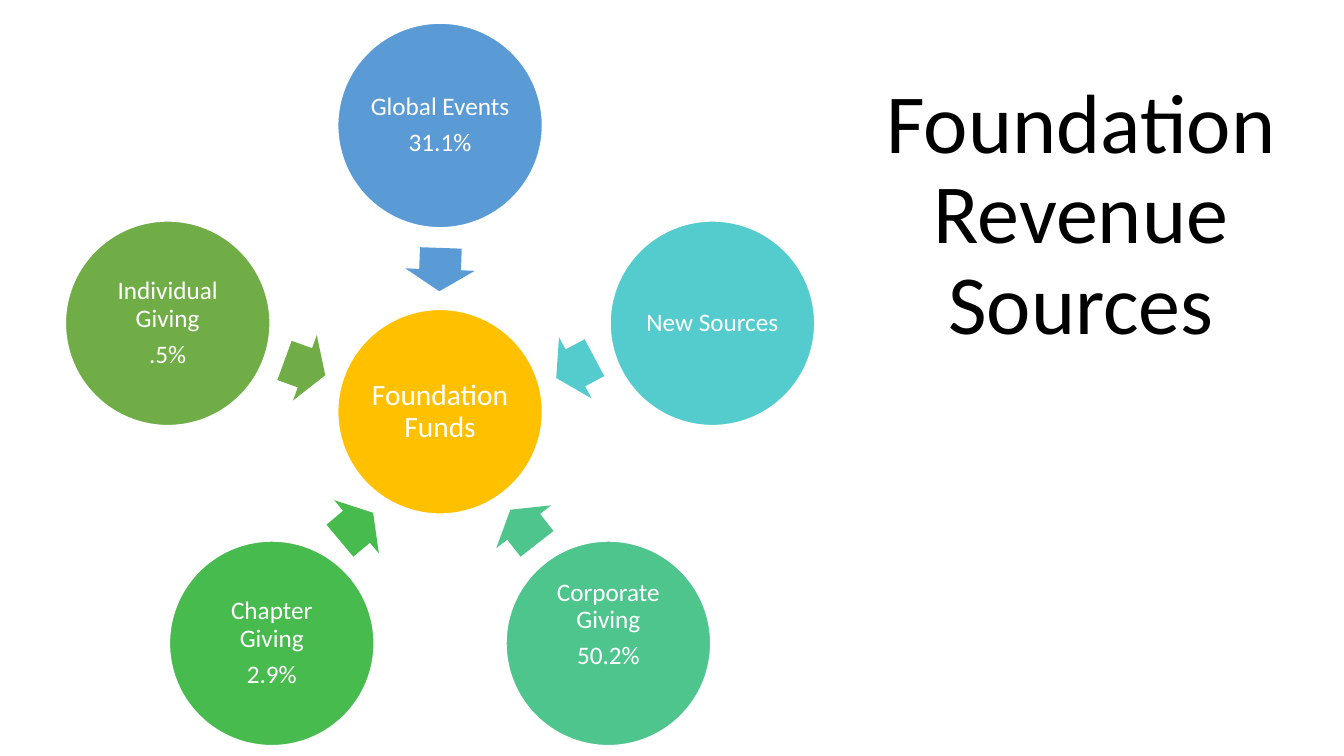
import math

import pptx
import pptx.dml.color
import pptx.enum.shapes
import pptx.enum.text
import pptx.util

Inches, Pt = pptx.util.Inches, pptx.util.Pt
MSO_SHAPE = pptx.enum.shapes.MSO_SHAPE
ANCHOR = pptx.enum.text.MSO_ANCHOR
CENTER = pptx.enum.text.PP_ALIGN.CENTER

HUB_X, HUB_Y = 4.365, 4.085
DIAMETER = 2.03
SOURCE_RADIUS, ARROW_RADIUS = 2.84, 1.41
ARROW_W, ARROW_H = 0.43, 0.69
SOURCES = [
    (["Global Events", "31.1%"], "5B9BD5", 92, 0.03),
    (["New Sources"], "54CCCD", 152, 0.03),
    (["Corporate Giving", "50.2%"], "4DC58D", 232, 0.39),
    (["Chapter Giving", "2.9%"], "48BB4F", 320, 0.03),
    (["Individual Giving", ".5%"], "70AD47", 20, 0.03),
]


def rgb(value):
    return pptx.dml.color.RGBColor.from_string(value)


class RadialSlide:
    """Hold the text style and the slide that elements are added to."""

    font = "Calibri"

    def __init__(self, prs):
        self.s = prs.slides.add_slide(prs.slide_layouts[0])
        subtitle = self.s.placeholders[1].element
        subtitle.getparent().remove(subtitle)

    def set_text(self, sp, lines, size, color, frame):
        tf = sp.text_frame
        tf.text = "\n".join(lines)
        frame = {"word_wrap": True, "auto_size": pptx.enum.text.MSO_AUTO_SIZE.NONE, **frame}
        for name, value in frame.items():
            setattr(tf, name, value)
        for p in tf.paragraphs:
            p.alignment = CENTER
            p.line_spacing = 0.9
            p.space_before = Pt(0)
            p.space_after = Pt(0.35 * size)
            for name, value in {"name": self.font, "size": Pt(size), "bold": False}.items():
                setattr(p.font, name, value)
            p.font.color.rgb = rgb(color)

    def title(self, text, left, top, width, height):
        sp = self.s.shapes.title
        box = {"left": left, "top": top, "width": width, "height": height}
        for name, value in box.items():
            setattr(sp, name, Inches(value))
        self.set_text(sp, [text], 60, "000000", {"vertical_anchor": ANCHOR.BOTTOM})

    def shape(self, kind, x, y, width, height, fill):
        sp = self.s.shapes.add_shape(
            kind, Inches(x - width / 2), Inches(y - height / 2), Inches(width), Inches(height))
        sp.shadow.inherit = False
        sp.fill.solid()
        sp.fill.fore_color.rgb = rgb(fill)
        return sp

    def circle(self, lines, x, y, fill, size, bottom=0.03):
        sp = self.shape(MSO_SHAPE.OVAL, x, y, DIAMETER, DIAMETER, fill)
        sp.line.color.rgb = rgb("FFFFFF")
        sp.line.width = Pt(1)
        frame = {f"margin_{side}": Inches(0.03) for side in ("left", "top", "right")}
        frame.update(margin_bottom=Inches(bottom), vertical_anchor=ANCHOR.MIDDLE)
        self.set_text(sp, lines, size, "FFFFFF", frame)

    def arrow(self, x, y, fill, rotation):
        sp = self.shape(MSO_SHAPE.RIGHT_ARROW, x, y, ARROW_W, ARROW_H, fill)
        sp.line.fill.background()
        sp.adjustments[0], sp.adjustments[1] = 0.6, 0.5
        sp.rotation = rotation


def around_hub(radius, angle):
    return HUB_X + radius * math.cos(angle), HUB_Y + radius * math.sin(angle)


def main():
    prs = pptx.Presentation()
    prs.slide_width, prs.slide_height = Inches(13.33), Inches(7.5)
    slide = RadialSlide(prs)
    slide.title("Foundation Revenue Sources", 8.63, 0.55, 4.18, 3)
    slide.circle(["Foundation Funds"], HUB_X, HUB_Y, "FFC000", 21)
    for i, (lines, color, rotation, bottom) in enumerate(SOURCES):
        angle = math.radians(360 / len(SOURCES) * i - 90)
        slide.arrow(*around_hub(ARROW_RADIUS, angle), color, rotation)
        slide.circle(lines, *around_hub(SOURCE_RADIUS, angle), color, 18, bottom)
    prs.save("out.pptx")


if __name__ == "__main__":
    main()
